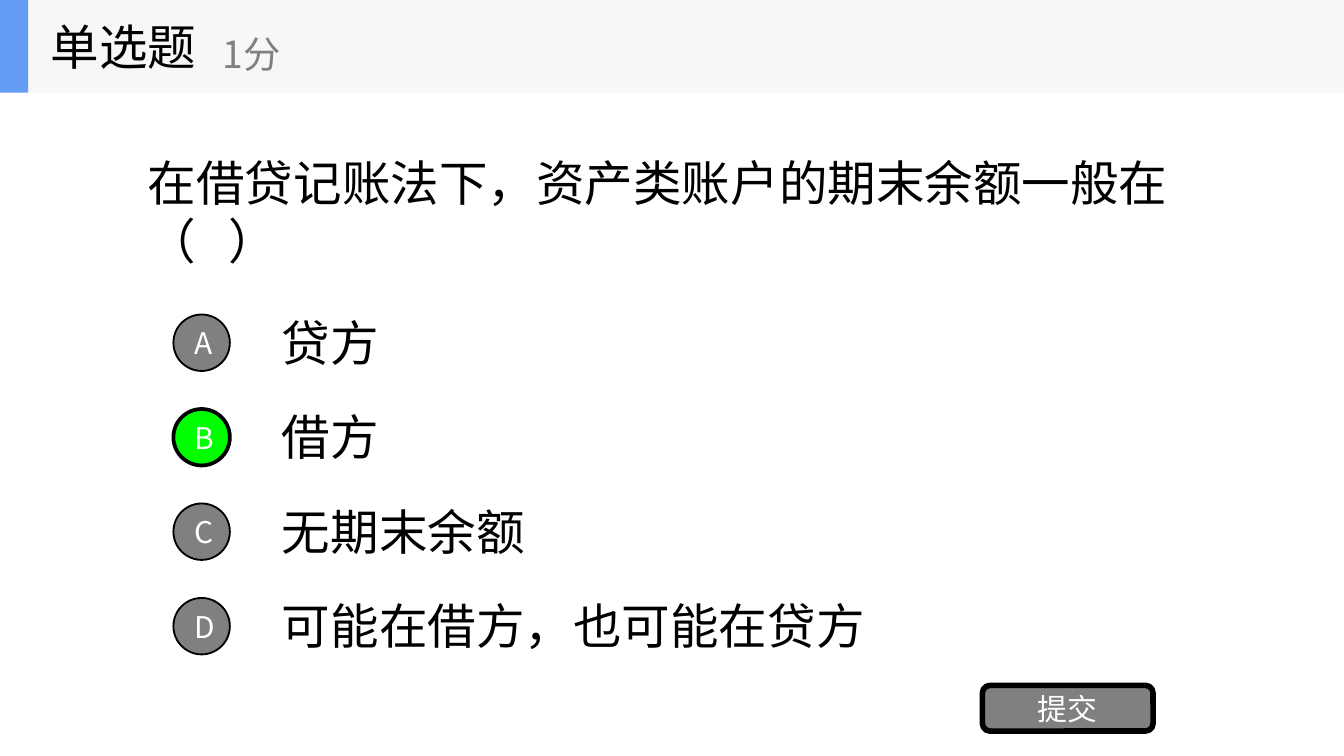
"""Build a single-choice quiz slide with four options and a submit button."""
from dataclasses import dataclass

from lxml.etree import SubElement
from pptx import Presentation
from pptx.dml.color import RGBColor
from pptx.enum.shapes import MSO_SHAPE as Shape
from pptx.enum.text import MSO_ANCHOR as Anchor, MSO_AUTO_SIZE as AutoSize, PP_ALIGN as Align
from pptx.oxml.ns import qn
from pptx.util import Inches, Pt

FONT = "Noto Sans CJK SC"
BLACK = RGBColor(0x00, 0x00, 0x00)
WHITE = RGBColor(0xFF, 0xFF, 0xFF)
GRAY = RGBColor(0x80, 0x80, 0x80)
GREEN = RGBColor(0x00, 0xFF, 0x00)
BLUE = RGBColor(0x63, 0x9E, 0xF4)
PALE = RGBColor(0xF6, 0xF7, 0xF8)

WIDTH = 10
HEIGHT = WIDTH * 9 / 16
HEADER_H = 0.69
ROW_PITCH = HEIGHT / 8
OPTION_TOP, BADGE_TOP, BADGE_SIZE = 2.28, 2.34, 0.42


@dataclass
class Box:
    left: float
    top: float
    width: float
    height: float

    def emu(self) -> tuple:
        return tuple(Inches(v) for v in (self.left, self.top, self.width, self.height))


@dataclass
class Option:
    letter: str
    text: str
    correct: bool = False


OPTIONS = [
    Option("A", "贷方"),
    Option("B", "借方", correct=True),
    Option("C", "无期末余额"),
    Option("D", "可能在借方，也可能在贷方"),
]


def write(sp, text: str, size: int, color: RGBColor, align=Align.LEFT) -> None:
    tf = sp.text_frame
    tf.text = text
    tf.word_wrap = True
    tf.auto_size = AutoSize.NONE
    tf.vertical_anchor = Anchor.MIDDLE
    p = tf.paragraphs[0]
    p.alignment = align
    p.font.size = Pt(size)
    p.font.color.rgb = color
    p.font.name = FONT
    SubElement(p._p.pPr.find(qn("a:defRPr")), qn("a:ea"), typeface=FONT)


def add_text(shapes, box: Box, text: str, size: int = 26, color: RGBColor = BLACK) -> None:
    write(shapes.add_textbox(*box.emu()), text, size, color)


def add_shape(shapes, kind, box: Box, fill: RGBColor, line: int = 0, text: str = "") -> None:
    sp = shapes.add_shape(kind, *box.emu())
    sp.shadow.inherit = False
    sp.fill.solid()
    sp.fill.fore_color.rgb = fill
    if line:
        sp.line.color.rgb = BLACK
        sp.line.width = Pt(line)
    else:
        sp.line.fill.background()
    if text:
        write(sp, text, 16, WHITE, Align.CENTER)


def add_option(shapes, row: int, option: Option) -> None:
    offset = row * ROW_PITCH
    add_text(shapes, Box(2, OPTION_TOP + offset, 7, 0.53), option.text)
    badge = Box(1.29, BADGE_TOP + offset, BADGE_SIZE, BADGE_SIZE)
    fill, line = (GREEN, 2) if option.correct else (GRAY, 1)
    add_shape(shapes, Shape.OVAL, badge, fill, line, option.letter)


def add_header(shapes) -> None:
    group = shapes.add_group_shape().shapes
    add_shape(group, Shape.RECTANGLE, Box(0, 0, WIDTH, HEADER_H), PALE)
    add_shape(group, Shape.RECTANGLE, Box(0, 0, 0.21, HEADER_H), BLUE)
    add_text(group, Box(0.28, 0, 2.08, HEADER_H), "单选题")
    add_text(group, Box(1.56, 0.12, 2.5, 0.56), "1分", 20, GRAY)


def main() -> None:
    prs = Presentation()
    prs.slide_width, prs.slide_height = Inches(WIDTH), Inches(HEIGHT)
    s = prs.slides.add_slide(prs.slide_layouts[5])
    title = s.shapes.title
    title.left, title.top, title.width, title.height = Box(1, HEADER_H, 8, 1.76).emu()
    write(title, "在借贷记账法下，资产类账户的期末余额一般在（   ）", 26, BLACK)
    for row, option in enumerate(OPTIONS):
        add_option(s.shapes, row, option)
    add_shape(s.shapes, Shape.ROUNDED_RECTANGLE, Box(7.31, 5.1, 1.27, 0.34), GRAY, 3, "提交")
    add_header(s.shapes)
    prs.save("out.pptx")


if __name__ == "__main__":
    main()
